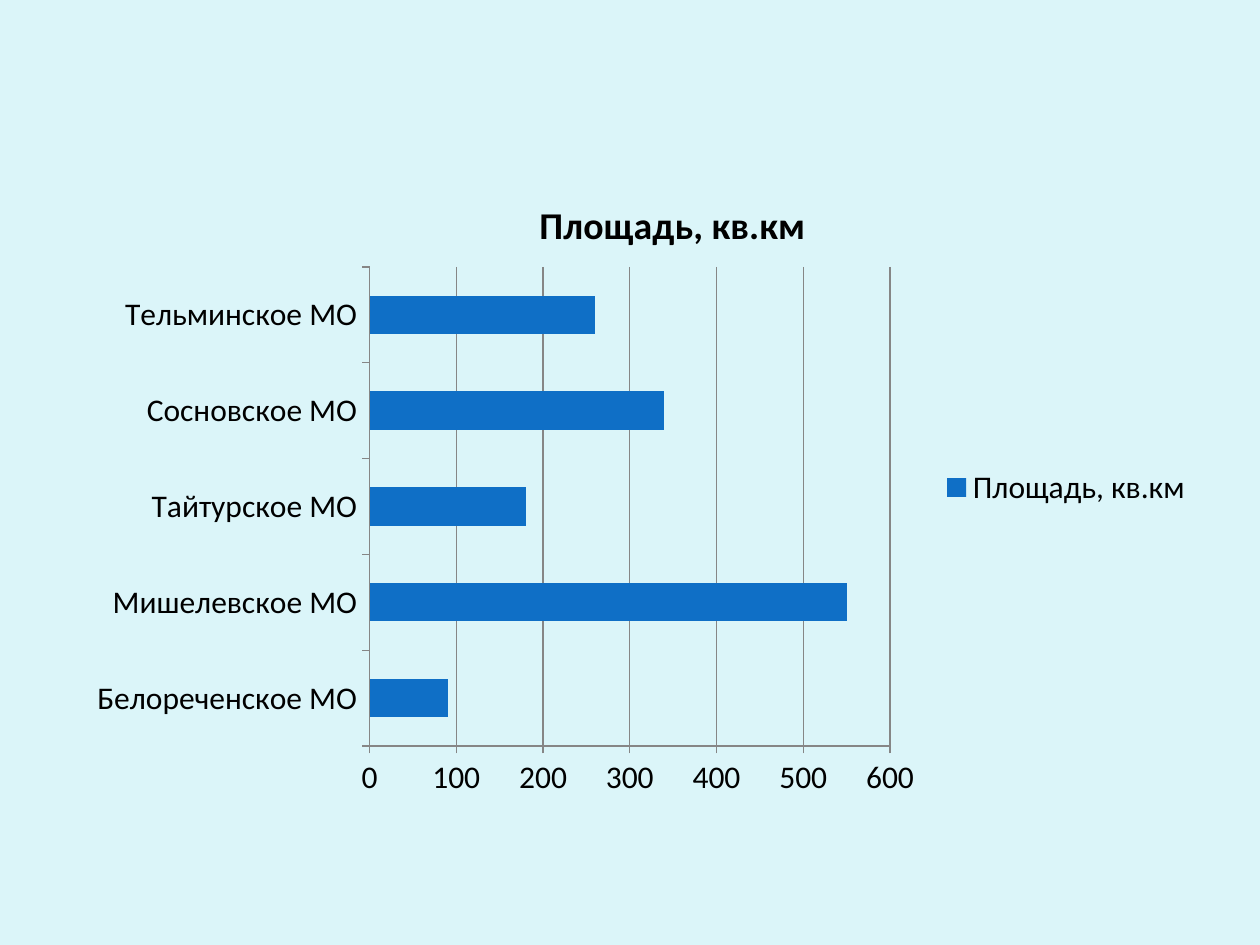
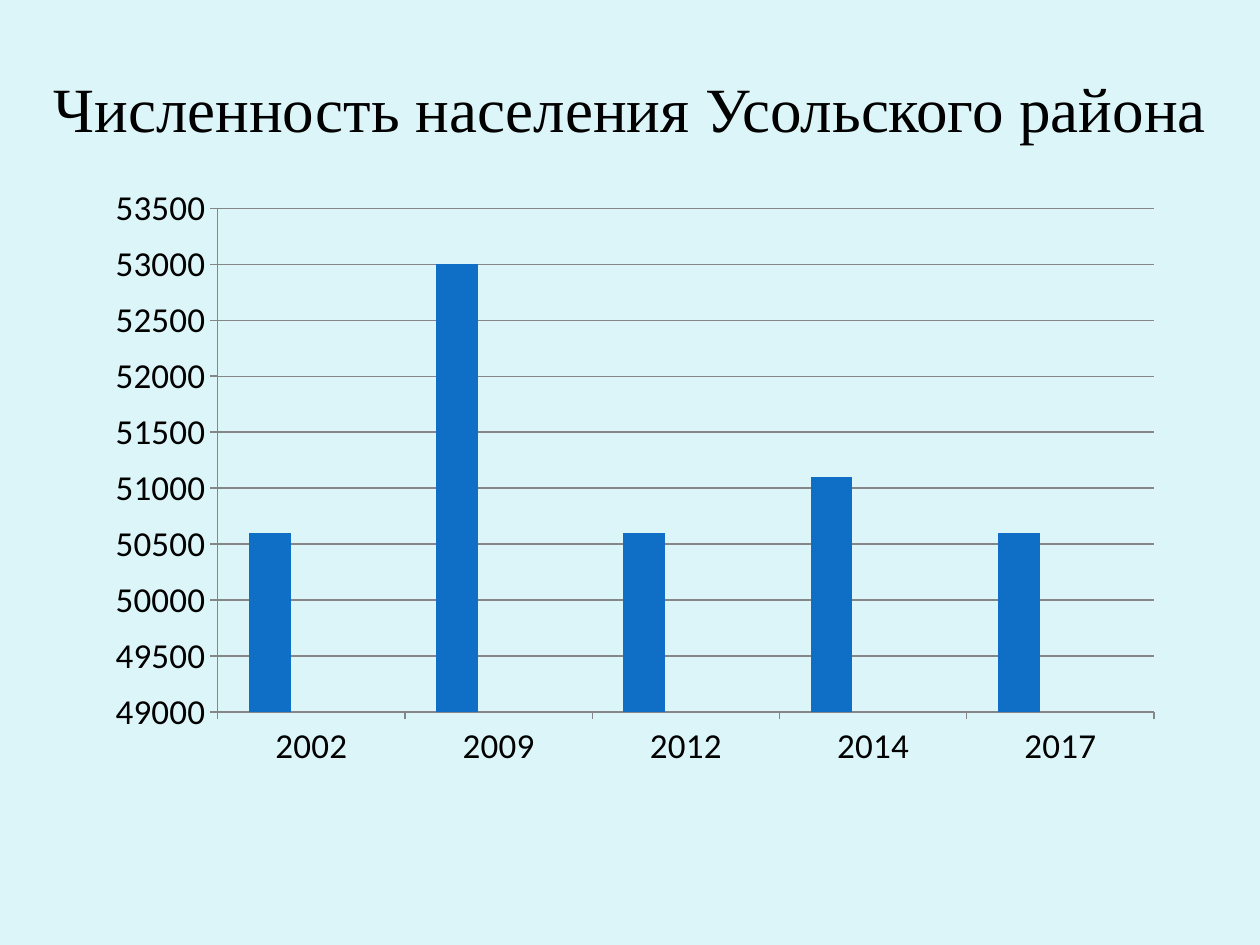
from dataclasses import dataclass

from pptx import Presentation
from pptx.chart.data import CategoryChartData
from pptx.dml.color import RGBColor
from pptx.enum.chart import XL_CHART_TYPE as ChartType
from pptx.enum.chart import XL_LEGEND_POSITION as LegendSide
from pptx.enum.chart import XL_TICK_MARK as TickMark
from pptx.enum.text import MSO_ANCHOR as Anchor
from pptx.enum.text import PP_ALIGN as Align
from pptx.oxml import parse_xml
from pptx.oxml.ns import nsdecls, qn
from pptx.util import Pt


@dataclass(frozen=True)
class Theme:
    background: RGBColor = RGBColor(0xDB, 0xF5, 0xF9)
    text: RGBColor = RGBColor(0, 0, 0)
    axis: RGBColor = RGBColor(0x86, 0x86, 0x86)
    series: tuple = (RGBColor(0x0F, 0x6F, 0xC6),
                     RGBColor(0x00, 0x9D, 0xD9),
                     RGBColor(0x0B, 0xD0, 0xD9))
    chart_font: str = "Calibri"
    title_font: str = "Times New Roman"
    title_size: int = 36
    chart_title_size: float = 21.6
    area_label_size: int = 18
    population_label_size: int = 20


THEME = Theme()
TITLE_ONLY, BLANK = 5, 6

AREA_NAME = "Площадь, кв.км"
AREAS = {
    "Белореченское МО": 90,
    "Мишелевское МО": 550,
    "Тайтурское МО": 180,
    "Сосновское МО": 340,
    "Тельминское МО": 260,
}
POPULATION = {"2002": 50600, "2009": 53000, "2012": 50600,
              "2014": 51100, "2017": 50600}


def set_layout(parent, index, **percents):
    """Place a chart part by percents of the chart box; w and h mark the inner plot."""
    for old in parent.findall(qn("c:layout")):
        parent.remove(old)
    target = '<c:layoutTarget val="inner"/>' if "w" in percents else ""
    modes = "".join(f'<c:{key}Mode val="edge"/>' for key in "xy")
    sizes = "".join(f'<c:{key} val="{value / 100:.4f}"/>'
                    for key, value in percents.items())
    parent.insert(index, parse_xml(
        f'<c:layout {nsdecls("c")}><c:manualLayout>{target}{modes}{sizes}'
        "</c:manualLayout></c:layout>"))


def style_font(font, name, size, bold=False):
    font.name = name
    font.size = Pt(size)
    font.bold = bold
    font.color.rgb = THEME.text


def style_line(line):
    line.color.rgb = THEME.axis
    line.width = Pt(0.75)


def style_value_axis(axis, low, high, step):
    axis.minimum_scale, axis.maximum_scale, axis.major_unit = low, high, step
    axis.has_major_gridlines = True
    style_line(axis.major_gridlines.format.line)


def add_bars(page, box, kind, categories, series, label_size, scale, plot_area):
    data = CategoryChartData()
    data.categories = categories
    for name, values in series.items():
        data.add_series(name, values)
    chart = page.shapes.add_chart(kind, *map(Pt, box), data).chart
    chart.has_title = False
    chart.has_legend = False
    style_font(chart.font, THEME.chart_font, label_size)

    plot = chart.plots[0]
    plot.gap_width, plot.overlap = 150, 0
    plot.vary_by_categories = False
    for bars, color in zip(plot.series, THEME.series):
        bars.format.fill.solid()
        bars.format.fill.fore_color.rgb = color

    for axis in (chart.category_axis, chart.value_axis):
        axis.major_tick_mark = TickMark.OUTSIDE
        axis.minor_tick_mark = TickMark.NONE
        style_line(axis.format.line)
    style_value_axis(chart.value_axis, *scale)
    set_layout(chart.element.find(".//" + qn("c:plotArea")), 0, **plot_area)
    return chart


def add_chart_title(chart, text, x, y):
    chart.has_title = True
    span = chart.chart_title.text_frame.paragraphs[0].add_run()
    span.text = text
    style_font(span.font, THEME.chart_font, THEME.chart_title_size, bold=True)
    set_layout(chart.element.find(".//" + qn("c:title")), 1, x=x, y=y)


def add_legend(chart, size):
    chart.has_legend = True
    chart.legend.position = LegendSide.RIGHT
    chart.legend.include_in_layout = False
    style_font(chart.legend.font, THEME.chart_font, size)


def add_title(page, box, text):
    title = page.shapes.title
    title.left, title.top, title.width, title.height = map(Pt, box)
    frame = title.text_frame
    frame.word_wrap = False
    frame.vertical_anchor = Anchor.MIDDLE
    para = frame.paragraphs[0]
    para.alignment = Align.CENTER
    span = para.add_run()
    span.text = text
    style_font(span.font, THEME.title_font, THEME.title_size)


def add_area_slide(deck):
    page = deck.slides.add_slide(deck.slide_layouts[BLANK])
    chart = add_bars(
        page, (42.5, 94.3, 646.5, 368.6), ChartType.BAR_CLUSTERED,
        list(AREAS), {AREA_NAME: list(AREAS.values())},
        THEME.area_label_size, (0, 600, 100),
        dict(x=26.1, y=15.8, w=46, h=74.3))
    add_chart_title(chart, AREA_NAME, x=40.5, y=4.1)
    add_legend(chart, THEME.area_label_size)


def add_population_slide(deck):
    page = deck.slides.add_slide(deck.slide_layouts[TITLE_ONLY])
    add_title(page, (20.2, 36, 679.6, 51), "Численность населения Усольского района")
    no_values = [None] * len(POPULATION)
    add_bars(
        page, (54, 100, 617.8, 345.6), ChartType.COLUMN_CLUSTERED,
        list(POPULATION),
        {"Series 1": list(POPULATION.values()),
         "Series 2": no_values, "Series 3": no_values},
        THEME.population_label_size, (49000, 53500, 500),
        dict(x=11.4, y=5.5, w=86.6, h=83.3))


def main():
    deck = Presentation()
    deck.slide_width, deck.slide_height = Pt(720), Pt(540)
    fill = deck.slide_master.background.fill
    fill.solid()
    fill.fore_color.rgb = THEME.background
    add_area_slide(deck)
    add_population_slide(deck)
    deck.save("out.pptx")


if __name__ == "__main__":
    main()
